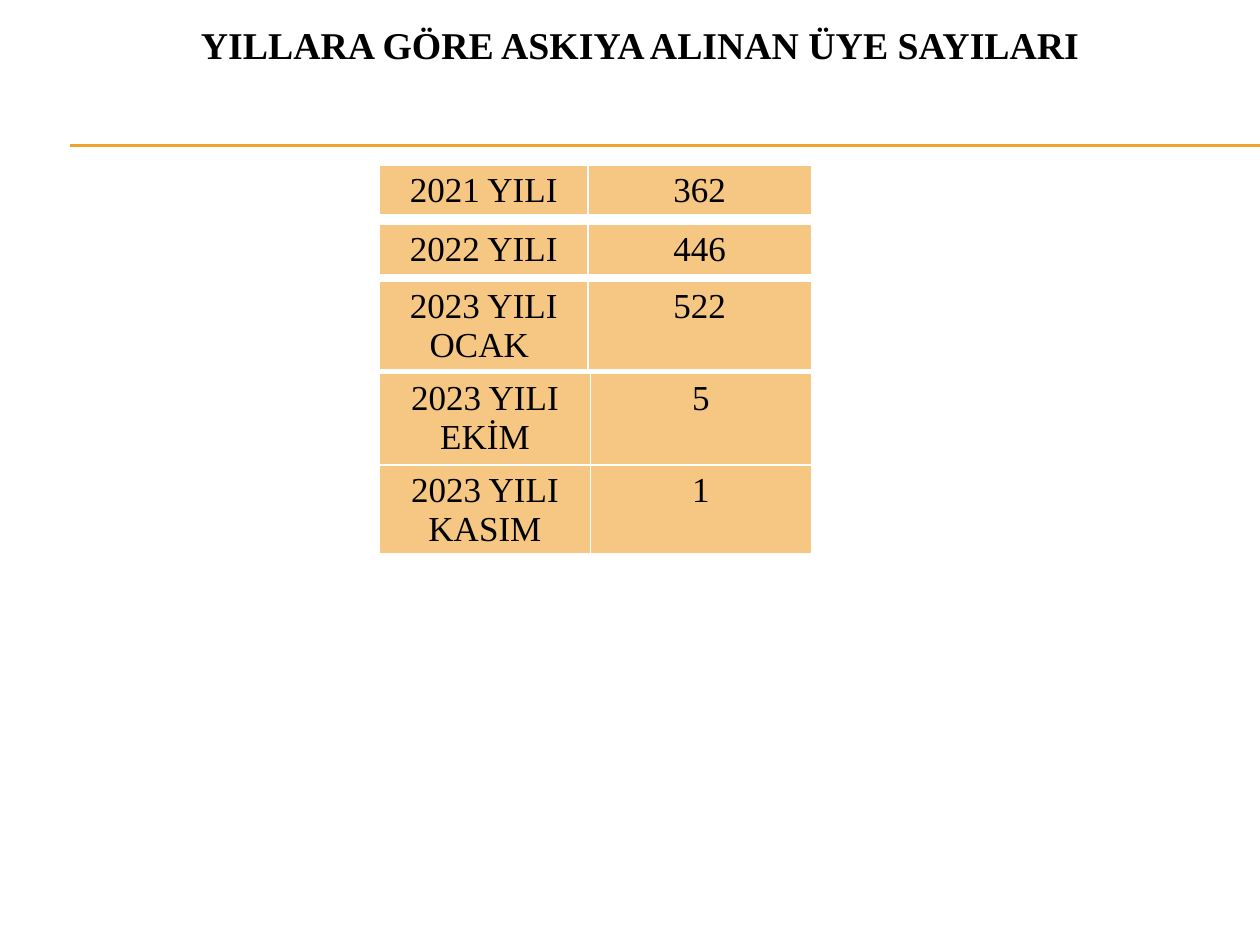
"""Build the slide of suspended member counts by year."""
import pptx
import pptx.util
import pptx.dml.color
import pptx.enum.shapes
import pptx.enum.text
import pptx.oxml
import pptx.oxml.ns

Pt = pptx.util.Pt
RGB = pptx.dml.color.RGBColor.from_string
CENTER = pptx.enum.text.PP_ALIGN.CENTER
FONT = "Times New Roman"
COLORS = {"text": "000000", "rule": "F0A22E", "cell": "F6C782", "edge": "FFFFFF"}
TITLE = "YILLARA GÖRE ASKIYA ALINAN ÜYE SAYILARI"
WIDE, NARROW = (119, 127.8), (120.4, 126.4)
TABLES = [
    ("2021 YILI", "362", 94.3, 28, WIDE),
    ("2022 YILI", "446", 128.2, 22.3, WIDE),
    ("2023 YILI OCAK ", "522", 160.6, 36, WIDE),
    ("2023 YILI EKİM", "5", 213.1, 56.9, NARROW),
    ("2023 YILI KASIM", "1", 265.7, 49.7, NARROW),
]
LEFT = 216.9
RULES = (82.8, 83.5)
EDGES = {"lnL": 1, "lnR": 1, "lnT": 1, "lnB": 3}


def style(para, size, bold=False):
    para.alignment = CENTER
    para.font.name = FONT
    para.font.size = Pt(size)
    para.font.bold = bold
    para.font.color.rgb = RGB(COLORS["text"])


def border(cell):
    props = cell._tc.get_or_add_tcPr()
    for spot, (tag, width) in enumerate(EDGES.items()):
        props.insert(spot, pptx.oxml.parse_xml(
            f'<a:{tag} {pptx.oxml.ns.nsdecls("a")} w="{Pt(width)}"><a:solidFill>'
            f'<a:srgbClr val="{COLORS["edge"]}"/></a:solidFill></a:{tag}>'))


def add_row(slide, label, count, top, height, widths):
    frame = slide.shapes.add_table(
        1, 2, Pt(LEFT), Pt(top), Pt(sum(widths)), Pt(height))
    table = frame.table
    table.first_row = table.horz_banding = False
    for col, (text, width) in enumerate(zip((label, count), widths)):
        table.columns[col].width = Pt(width)
        cell = table.cell(0, col)
        cell.text = text
        cell.fill.solid()
        cell.fill.fore_color.rgb = RGB(COLORS["cell"])
        border(cell)
        style(cell.text_frame.paragraphs[0], 20)


def add_rule(slide, top):
    line = slide.shapes.add_connector(
        pptx.enum.shapes.MSO_CONNECTOR.STRAIGHT, Pt(40.3), Pt(top), Pt(720), Pt(top))
    line.line.color.rgb = RGB(COLORS["rule"])
    line.line.width = Pt(0.75)
    line._element.spPr.append(pptx.oxml.parse_xml(
        f'<a:effectLst {pptx.oxml.ns.nsdecls("a")}/>'))


def main():
    deck = pptx.Presentation()
    deck.slide_width, deck.slide_height = Pt(720), Pt(540)
    slide = deck.slides.add_slide(deck.slide_layouts[5])
    for top in RULES:
        add_rule(slide, top)
    title = slide.shapes.title
    title.left, title.top, title.width, title.height = map(Pt, (23.8, 9.4, 684, 32.4))
    title.text_frame.text = TITLE
    title.text_frame.vertical_anchor = pptx.enum.text.MSO_ANCHOR.MIDDLE
    style(title.text_frame.paragraphs[0], 21.6, True)
    for entry in TABLES:
        add_row(slide, *entry)
    deck.save("out.pptx")


if __name__ == "__main__":
    main()
